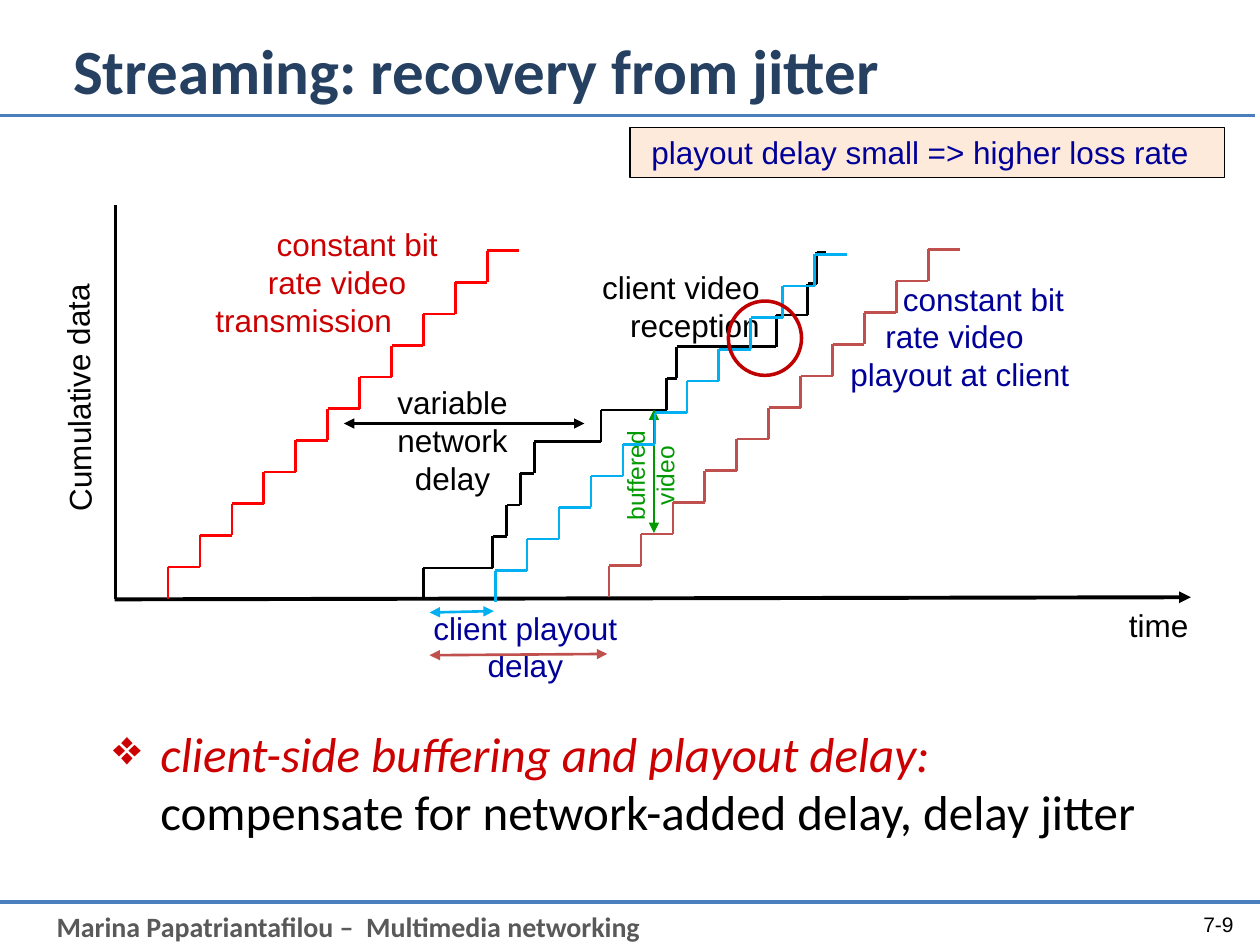
from pptx import Presentation
from pptx.dml.color import RGBColor
from pptx.enum.shapes import MSO_CONNECTOR as Line, MSO_SHAPE as Shape
from pptx.enum.text import MSO_ANCHOR as Anchor, MSO_AUTO_SIZE as Auto, PP_ALIGN as Align
from pptx.oxml.ns import qn
from pptx.util import Pt
from lxml.etree import SubElement

COLORS = {
    "black": "000000", "rule": "4B7EBC", "title": "254061", "footer": "595959",
    "red": "FF0000", "crimson": "CC0000", "ring": "C00000", "rose": "C0504D",
    "navy": "000099", "green": "009900", "sky": "00B0F0", "peach": "FDEADA",
}
STEPS, TREAD, RISE = 11, 18.25, 18.07


def rgb(name):
    return RGBColor.from_string(COLORS[name])


class SlideBuilder:
    def __init__(self, slide, font="Arial", size=18, width=1.5):
        self.slide, self.font, self.size, self.width = slide, font, size, width

    def run(self, p, text, color, **fmt):
        r = p.add_run()
        r.text = text
        values = {"name": self.font, "size": Pt(self.size), **fmt}
        for key, value in values.items():
            setattr(r.font, key, value)
        r.font.color.rgb = rgb(color)

    def frame(self, sp, wrap=True, anchor=Anchor.TOP):
        tf = sp.text_frame
        values = {"word_wrap": wrap, "vertical_anchor": anchor, "auto_size": Auto.NONE}
        for key, value in values.items():
            setattr(tf, key, value)
        return tf

    def title(self, box, text, color, **fmt):
        sp = self.slide.shapes.title
        for key, value in zip(("left", "top", "width", "height"), box):
            setattr(sp, key, Pt(value))
        p = self.frame(sp, anchor=Anchor.MIDDLE).paragraphs[0]
        p.alignment = Align.LEFT
        self.run(p, text, color, **fmt)

    def text(self, box, lines, color, align=Align.LEFT, indents=(), rotation=0,
             wrap=True, anchor=Anchor.TOP, **fmt):
        sp = self.slide.shapes.add_textbox(*map(Pt, box))
        sp.rotation = rotation
        tf = self.frame(sp, wrap, anchor)
        for i, line in enumerate(lines):
            p = tf.add_paragraph() if i else tf.paragraphs[0]
            p.alignment = align
            if indents:
                p._p.get_or_add_pPr().set("marL", str(Pt(indents[i])))
            self.run(p, line, color, **fmt)

    def bullet(self, box, runs, char, hang):
        sp = self.slide.shapes.add_textbox(*map(Pt, box))
        p = self.frame(sp).paragraphs[0]
        pPr = p._p.get_or_add_pPr()
        pPr.set("marL", str(Pt(hang)))
        pPr.set("indent", str(-Pt(hang)))
        SubElement(pPr, qn("a:buChar")).set("char", char)
        for text, color, fmt in runs:
            self.run(p, text, color, **fmt)

    def line(self, x1, y1, x2, y2, color, width=None, arrows=()):
        sp = self.slide.shapes.add_connector(Line.STRAIGHT, *map(Pt, (x1, y1, x2, y2)))
        sp.line.color.rgb = rgb(color)
        sp.line.width = Pt(width or self.width)
        for end in arrows:
            SubElement(sp.line._get_or_add_ln(), qn(f"a:{end}")).set("type", "triangle")
        SubElement(sp._element.spPr, qn("a:effectLst"))

    def double_arrow(self, x1, y1, x2, y2, color):
        self.line(x1, y1, x2, y2, color, arrows=("headEnd", "tailEnd"))

    def stairs(self, xs, bottom, color):
        for i, (x, x_next) in enumerate(zip(xs, xs[1:])):
            y = bottom - i * RISE
            self.line(x, y, x, y - RISE, color)
            self.line(x, y - RISE, x_next, y - RISE, color)

    def even_stairs(self, left, bottom, color):
        self.stairs([left + i * TREAD for i in range(STEPS + 1)], bottom, color)

    def shape(self, kind, box, line, width, fill=None):
        sp = self.slide.shapes.add_shape(kind, *map(Pt, box))
        sp.shadow.inherit = False
        if fill:
            sp.fill.solid()
            sp.fill.fore_color.rgb = rgb(fill)
        else:
            sp.fill.background()
        sp.line.color.rgb = rgb(line)
        sp.line.width = Pt(width)
        return sp

    def callout(self, box, text, color, fill):
        sp = self.shape(Shape.RECTANGLE, box, "black", 0.75, fill)
        tf = self.frame(sp, anchor=Anchor.MIDDLE)
        tf.margin_left = Pt(12.2)
        p = tf.paragraphs[0]
        p.alignment = Align.LEFT
        self.run(p, text, color)


def main():
    prs = Presentation()
    prs.slide_width, prs.slide_height = Pt(720), Pt(540)
    s = SlideBuilder(prs.slides.add_slide(prs.slide_layouts[5]))

    # Title, rules and footer
    s.title((34.6, 23.8, 636.5, 31), "Streaming: recovery from jitter", "title",
            name="Calibri", size=Pt(36), bold=True)
    s.line(-3, 66, 717, 66, "rule", 2.25)
    s.line(0, 515.5, 720, 515.5, "rule", 2.25)
    s.text((25.2, 516.2, 666, 26.6), ["Marina Papatriantafilou –  Multimedia networking"],
           "footer", name="Calibri", size=Pt(16), bold=True)
    s.text((654.5, 513.4, 57.6, 28.8), ["7-9"], "black", Align.RIGHT,
           anchor=Anchor.MIDDLE, size=Pt(12))

    # Axes
    s.line(66, 117.4, 66, 342, "black", 2.25)
    s.line(65.5, 342.5, 680.5, 341.3, "black", 2.25, arrows=["tailEnd"])
    s.text((-32.4, 208, 154, 28.8), ["Cumulative data"], "black", rotation=269.4)
    s.text((638, 342.7, 49, 28.8), ["time"], "black", wrap=False)

    # Constant bit rate transmission
    s.text((116, 125.3, 147, 72.7), ["constant bit", "rate video", "transmission"],
           "crimson", indents=(35, 30, 0))
    s.even_stairs(96, 342, "red")

    # Client reception after variable network delay
    s.stairs([242, 281.6, 289.5, 297.4, 305.3, 343.4, 381, 386.7, 443.7, 461.5,
              466.6, 472.3], 342.7, "black")
    s.text((219, 215.3, 79.2, 72.7), ["variable", "network", "delay"], "black",
           Align.CENTER, wrap=False)
    s.double_arrow(196.5, 242, 334, 242, "black")
    s.text((335.5, 149.8, 105.8, 51), ["client video", "reception"], "black", Align.RIGHT)

    # Constant bit rate playout with a long delay
    s.even_stairs(348, 341.3, "rose")
    s.text((473.8, 156.2, 150.5, 72.7), ["constant bit", "rate video", "playout at client"],
           "navy", indents=(35, 25, 5))
    s.text((234, 344.2, 132.5, 50.4), ["client playout", "delay"], "navy", Align.CENTER)
    s.double_arrow(245.5, 374.4, 347, 373.7, "rose")

    # Buffered video
    s.double_arrow(373.7, 304.6, 373.7, 234, "green")
    s.text((338.4, 251.3, 66.2, 41), ["buffered", "video"], "green", Align.CENTER,
           rotation=270, wrap=False, size=Pt(14))

    # Key message
    s.bullet((57.6, 409.7, 612, 69.8), [
        ("client-side buffering and playout delay: ", "crimson",
         {"name": "Calibri", "size": Pt(28), "italic": True}),
        ("compensate for network-added delay, delay jitter", "black",
         {"name": "Calibri", "size": Pt(28)}),
    ], "❖", 27)

    # Playout with a short delay, and the loss it causes
    s.even_stairs(283, 344.2, "sky")
    s.callout((360, 72.7, 339.8, 28.8), "playout delay small => higher loss rate",
              "navy", "peach")
    s.double_arrow(245.5, 350, 282.2, 349.2, "sky")
    s.shape(Shape.OVAL, (416.2, 172, 41.8, 42.5), "ring", 2)

    prs.save("out.pptx")


if __name__ == "__main__":
    main()
